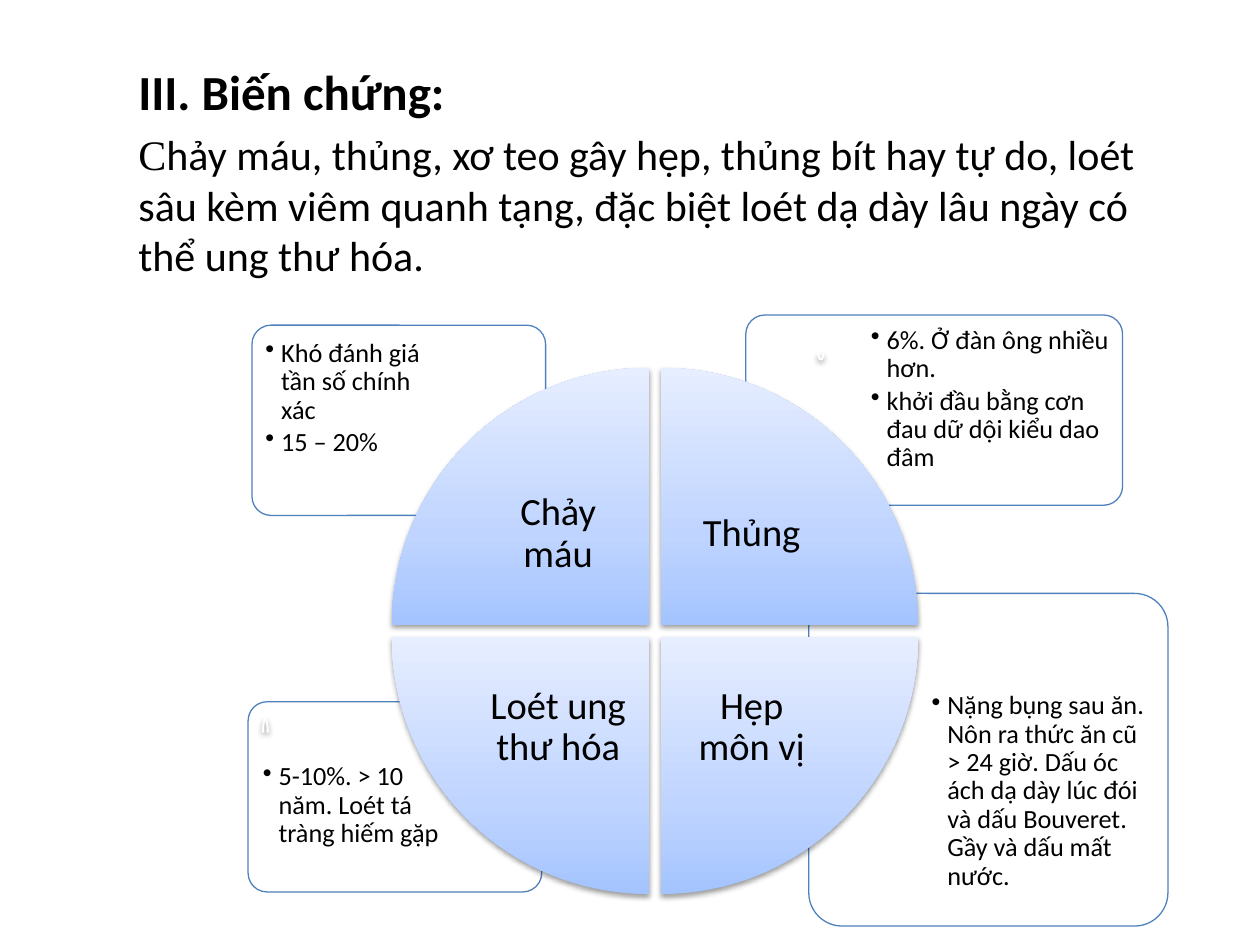
import pptx
import pptx.util
import pptx.dml.color
import pptx.enum.shapes
import pptx.enum.text
import pptx.oxml
import pptx.oxml.ns
from lxml import etree

Pt = pptx.util.Pt
KIND = pptx.enum.shapes.MSO_SHAPE
ALIGN = pptx.enum.text.PP_ALIGN
MID = pptx.enum.text.MSO_ANCHOR.MIDDLE
qn = pptx.oxml.ns.qn
NS = 'xmlns:a="http://schemas.openxmlformats.org/drawingml/2006/main"'

HUES = {
    "text": "000000", "paper": "FFFFFF", "edge": "4F81BD", "shade": "000000",
    "low": "A4C4FF", "mid": "BFD4FF", "high": "E6EEFF",
    "dim": "CDDDFE", "pale": "DBE6FE", "light": "F0F5FF",
}
WEDGE, PITCH, LABEL = 146.9, 153.8, 103.7
LEFT, TOP = 223.9, 210.2

# Note frame, text area, inset, bullets
NOTES = [
    ((462.2, 339.1, 205.2, 190.1), (527.8, 391, 135.4, 134.6), 4.5,
     ["Nặng bụng sau ăn. Nôn ra thức ăn cũ > 24 giờ. Dấu óc ách dạ dày "
      "lúc đói và dấu Bouveret. Gầy và dấu mất nước."]),
    ((141.8, 401, 167.8, 108.7), (144.7, 430.6, 112.3, 76.3), 5.5,
     ["5-10%. > 10 năm. Loét tá tràng hiếm gặp"]),
    ((426.2, 180, 215.3, 108.7), (493.2, 182.2, 146.2, 76.3), 4.5,
     ["6%. Ở đàn ông nhiều hơn.",
      "khởi đầu bằng cơn đau dữ dội kiểu dao đâm"]),
    ((144, 185.8, 167.8, 108.7), (146.2, 188.6, 112.3, 76.3), 5.5,
     ["Khó đánh giá tần số chính xác", "15 – 20%"]),
]
# Label, column, row, turn
PARTS = [("Chảy máu", 0, 0, 0), ("Thủng", 1, 0, 90),
         ("Hẹp môn vị", 1, 1, 180), ("Loét ung thư hóa", 0, 1, 270)]
# Small curved arrows: place, turn
ARROWS = [((467.3, 198, 3.6, 7.9), 0), ((149.8, 410.4, 3.6, 15.8), 180)]


def hue(name):
    return pptx.dml.color.RGBColor.from_string(HUES[name])


def style(font, size, face="Calibri", bold=False):
    font.size, font.name, font.bold = Pt(size), face, bold
    font.color.rgb = hue("text")


def add_shape(slide, kind, place, edge=None):
    shape = slide.shapes.add_shape(kind, *map(Pt, place))
    shape.shadow.inherit = False
    if edge:
        shape.line.color.rgb = hue(edge)
        shape.line.width = Pt(0.75)
    else:
        shape.line.fill.background()
    return shape


def add_gloss(shape, names):
    """Fill upward through three colours and drop a soft shadow."""
    shape.fill.background()
    props = shape._element.spPr
    stops = "".join(
        f'<a:gs pos="{pos}"><a:srgbClr val="{HUES[name]}"/></a:gs>'
        for pos, name in zip((0, 35000, 100000), names))
    blank = props.find(qn("a:noFill"))
    props.replace(blank, pptx.oxml.parse_xml(
        f'<a:gradFill {NS} rotWithShape="0"><a:gsLst>{stops}</a:gsLst>'
        '<a:lin ang="16200000" scaled="0"/></a:gradFill>'))
    props.find(qn("a:effectLst")).append(pptx.oxml.parse_xml(
        f'<a:outerShdw {NS} blurRad="{Pt(3.1)}" dist="{Pt(1.6)}" '
        f'dir="5400000" rotWithShape="0"><a:srgbClr val="{HUES["shade"]}">'
        '<a:alpha val="38000"/></a:srgbClr></a:outerShdw>'))


def add_box(slide, place, inset):
    frame = slide.shapes.add_textbox(*map(Pt, place)).text_frame
    frame.word_wrap = True
    frame.margin_left = frame.margin_right = Pt(inset)
    frame.margin_top = frame.margin_bottom = Pt(inset)
    return frame


def add_lines(frame, lines):
    """Yield one paragraph for each line of text."""
    for num, line in enumerate(lines):
        para = frame.add_paragraph() if num else frame.paragraphs[0]
        para.text = line
        yield para


def add_intro(slide):
    frame = add_box(slide, (36, 31.7, 648, 450.7), 3.6)
    frame.margin_left = frame.margin_right = Pt(7.2)
    head, body = add_lines(frame, ["III. Biến chứng:", "C"])
    for para in (head, body):
        para._p.get_or_add_pPr().set("marL", str(Pt(36)))
    style(head.font, 28, bold=True)
    body.space_before = Pt(4.8)
    style(body.runs[0].font, 24, "Times New Roman")
    rest = body.add_run()
    rest.text = ("hảy máu, thủng, xơ teo gây hẹp, thủng bít hay tự do, loét sâu "
                 "kèm viêm quanh tạng, đặc biệt loét dạ dày lâu ngày có thể "
                 "ung thư hóa.")
    style(rest.font, 24)


def add_note(slide, place, area, inset, lines):
    card = add_shape(slide, KIND.ROUNDED_RECTANGLE, place, "edge")
    card.adjustments[0] = 0.1
    card.fill.solid()
    card.fill.fore_color.rgb = hue("paper")
    tint = card._element.spPr.find(qn("a:solidFill"))[0]
    etree.SubElement(tint, qn("a:alpha")).set("val", "90000")
    for para in add_lines(add_box(slide, area, inset), lines):
        props = para._p.get_or_add_pPr()
        props.set("marL", str(Pt(9)))
        props.set("indent", str(-Pt(9)))
        etree.SubElement(props, qn("a:buChar")).set("char", "•")
        para.line_spacing = 0.9
        para.space_after = Pt(2.25)
        style(para.font, 15)


def add_part(slide, label, col, row, turn):
    x, y = LEFT + col * PITCH, TOP + row * PITCH
    wedge = add_shape(slide, KIND.PIE_WEDGE, (x, y, WEDGE, WEDGE))
    wedge.rotation = turn
    add_gloss(wedge, ("low", "mid", "high"))
    # The label sits in the corner nearest the centre
    shift = WEDGE - LABEL
    place = (x + shift * (1 - col), y + shift * (1 - row), LABEL, LABEL)
    frame = add_box(slide, place, 12.3)
    frame.vertical_anchor = MID
    for para in add_lines(frame, [label]):
        para.alignment = ALIGN.CENTER
        para.line_spacing = 0.9
        style(para.font, 22)


def add_arrow(slide, place, turn):
    arrow = add_shape(slide, KIND.CIRCULAR_ARROW, place, "paper")
    arrow.rotation = turn
    for flip in ("flipH", "flipV"):
        arrow._element.spPr.find(qn("a:xfrm")).set(flip, "1")
    add_gloss(arrow, ("dim", "pale", "light"))


def main():
    deck = pptx.Presentation()
    deck.slide_width, deck.slide_height = Pt(720), Pt(540)
    slide = deck.slides.add_slide(deck.slide_layouts[6])
    add_intro(slide)
    for note in NOTES:
        add_note(slide, *note)
    for part in PARTS:
        add_part(slide, *part)
    for arrow in ARROWS:
        add_arrow(slide, *arrow)
    deck.save("out.pptx")


if __name__ == "__main__":
    main()
